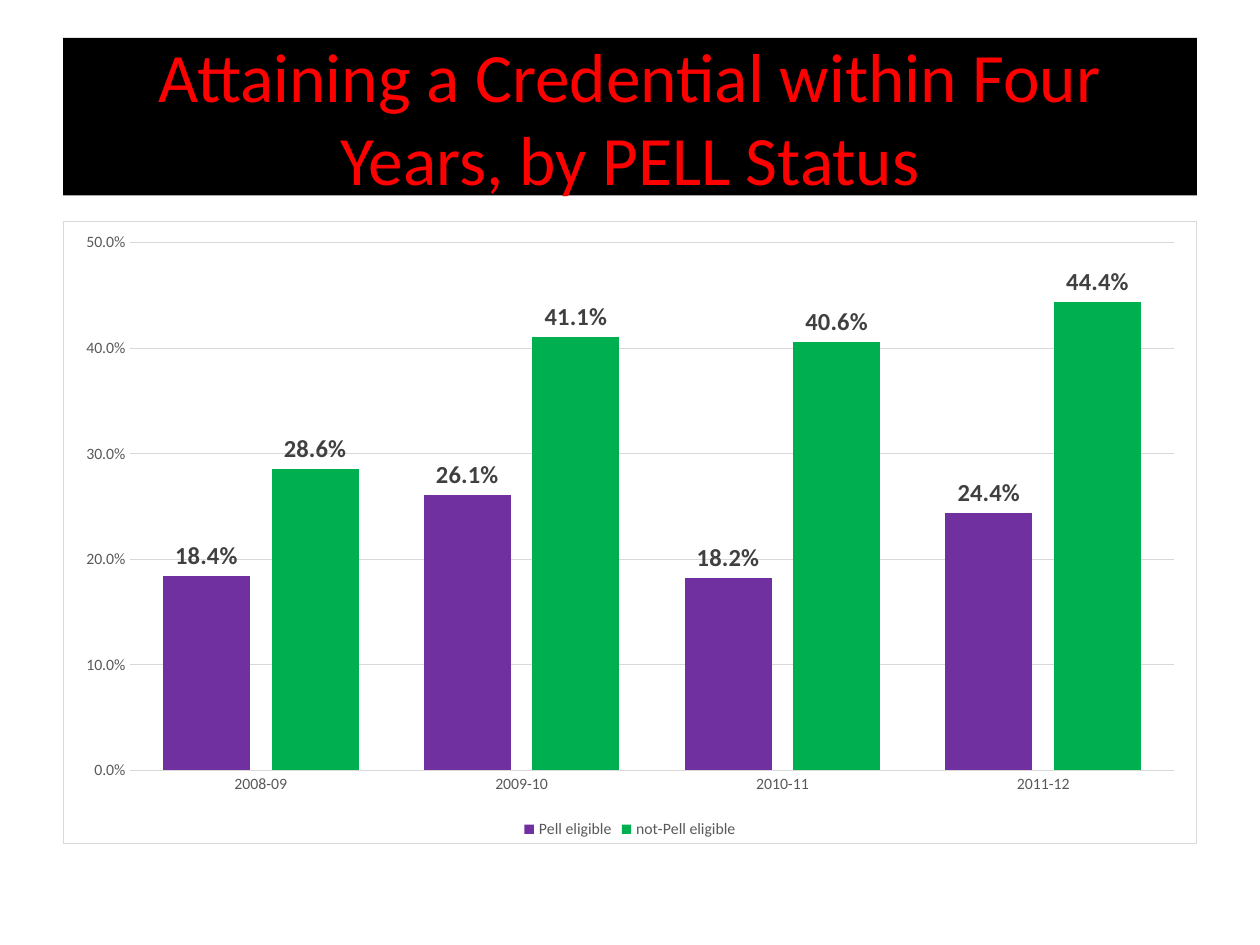
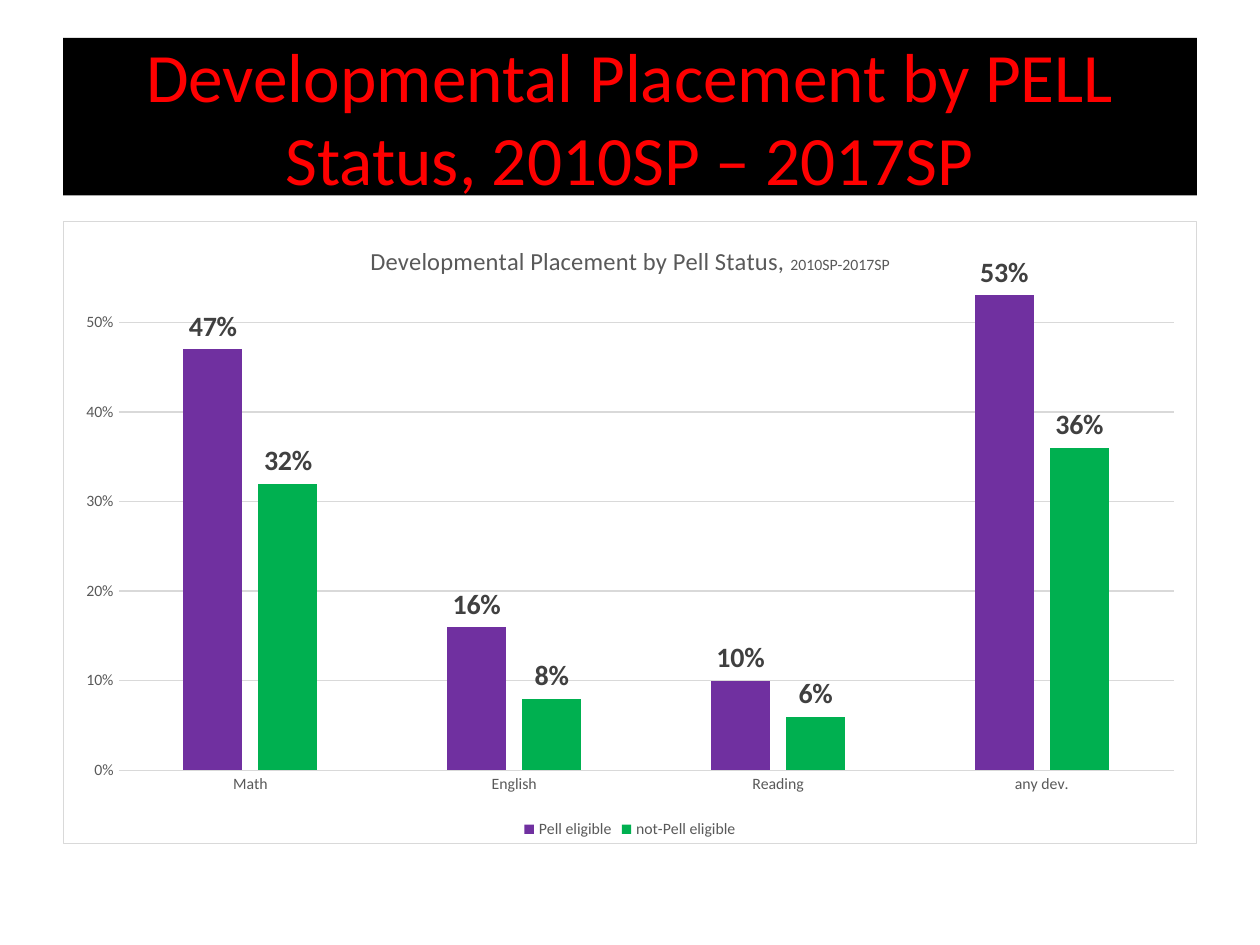
from typing import Any, NamedTuple

from lxml.etree import fromstring
from pptx import Presentation
from pptx.chart.chart import Chart
from pptx.chart.data import CategoryChartData as Data
from pptx.dml.color import RGBColor as Rgb
from pptx.enum.chart import XL_CHART_TYPE as Kind
from pptx.enum.chart import XL_LABEL_POSITION as Spot
from pptx.enum.chart import XL_LEGEND_POSITION as Side
from pptx.enum.chart import XL_TICK_MARK as Tick
from pptx.enum.text import MSO_ANCHOR as Anchor
from pptx.enum.text import MSO_AUTO_SIZE as Auto
from pptx.enum.text import PP_ALIGN as Align
from pptx.util import Pt

HEX = {
    "band": "000000",
    "title": "FF0000",
    "text": "595959",
    "label": "404040",
    "rule": "D9D9D9",
    "paper": "FFFFFF",
    "Pell eligible": "7030A0",
    "not-Pell eligible": "00B050",
}
FACE = "Calibri"
LEFT, WIDTH = Pt(36), Pt(648)
NS = (
    'xmlns:c="http://schemas.openxmlformats.org/drawingml/2006/chart" '
    'xmlns:a="http://schemas.openxmlformats.org/drawingml/2006/main"'
)


class Page(NamedTuple):
    title: str
    groups: list[str]
    pell: list[float]
    other: list[float]
    form: str
    size: int
    gap: int
    lap: int
    top: float
    head: tuple[tuple[str, int], ...] = ()


PAGES = [
    Page(
        title="Attaining a Credential within Four Years, by PELL Status",
        groups=["2008-09", "2009-10", "2010-11", "2011-12"],
        pell=[0.184, 0.261, 0.182, 0.244],
        other=[0.286, 0.411, 0.406, 0.444],
        form="0.0%", size=14, gap=75, lap=-25, top=0.5,
    ),
    Page(
        title="Developmental Placement by PELL Status, 2010SP – 2017SP",
        groups=["Math", "English", "Reading", "any dev."],
        pell=[0.47, 0.16, 0.1, 0.53],
        other=[0.32, 0.08, 0.06, 0.36],
        form="0%", size=16, gap=219, lap=-27, top=0.53,
        head=(("Developmental Placement by Pell Status, ", 14), ("2010SP-2017SP", 9)),
    ),
]


def apply(item: Any, **values: Any) -> None:
    for name, value in values.items():
        setattr(item, name, value)


def style(font: Any, size: float, tone: str, bold: bool = False) -> None:
    apply(font, name=FACE, size=Pt(size), bold=bold)
    font.color.rgb = Rgb.from_string(HEX[tone])


def paint(fill: Any, tone: str) -> None:
    fill.solid()
    fill.fore_color.rgb = Rgb.from_string(HEX[tone])


def rule(line: Any) -> None:
    paint(line.fill, "rule")
    line.width = Pt(0.75)


def band(shape: Any, text: str) -> None:
    apply(shape, left=LEFT, top=Pt(21.6), width=WIDTH, height=Pt(90))
    paint(shape.fill, "band")
    frame = shape.text_frame
    apply(frame, text=text, word_wrap=True, auto_size=Auto.NONE,
          vertical_anchor=Anchor.MIDDLE)
    line = frame.paragraphs[0]
    line.alignment = Align.CENTER
    style(line.runs[0].font, 39.6, "title")


def frame(chart: Chart) -> None:
    box = fromstring(
        f'<c:spPr {NS}><a:solidFill><a:srgbClr val="{HEX["paper"]}"/></a:solidFill>'
        f'<a:ln w="{Pt(0.75)}"><a:solidFill><a:srgbClr val="{HEX["rule"]}"/>'
        "</a:solidFill></a:ln></c:spPr>"
    )
    chart.element.find("{*}chart").addnext(box)


def axes(chart: Chart, page: Page) -> None:
    for axis in (chart.category_axis, chart.value_axis):
        apply(axis, major_tick_mark=Tick.NONE, minor_tick_mark=Tick.NONE)
        style(axis.tick_labels.font, 9, "text")
    rule(chart.category_axis.format.line)
    scale = chart.value_axis
    apply(scale, minimum_scale=0, maximum_scale=page.top, major_unit=0.1,
          has_major_gridlines=True)
    apply(scale.tick_labels, number_format=page.form, number_format_is_linked=False)
    scale.format.line.fill.background()
    rule(scale.major_gridlines.format.line)


def bars(chart: Chart, page: Page) -> None:
    plot = chart.plots[0]
    apply(plot, gap_width=page.gap, overlap=page.lap, vary_by_categories=False)
    for row in plot.series:
        paint(row.format.fill, row.name)
        row.invert_if_negative = False
        labels = row.data_labels
        apply(labels, show_value=True, position=Spot.OUTSIDE_END,
              number_format=page.form, number_format_is_linked=False)
        style(labels.font, page.size, "label", True)


def heading(chart: Chart, page: Page) -> None:
    chart.has_title = bool(page.head)
    if page.head:
        line = chart.chart_title.text_frame.paragraphs[0]
        for text, size in page.head:
            run = line.add_run()
            run.text = text
            style(run.font, size, "text")
        chart.chart_title.include_in_layout = False


def graph(slide: Any, page: Page) -> None:
    data = Data(number_format=page.form)
    data.categories = page.groups
    data.add_series("Pell eligible", page.pell)
    data.add_series("not-Pell eligible", page.other)
    chart = slide.shapes.add_chart(
        Kind.COLUMN_CLUSTERED, LEFT, Pt(126), WIDTH, Pt(356.4), data
    ).chart
    style(chart.font, 10, "band")
    heading(chart, page)
    chart.has_legend = True
    apply(chart.legend, position=Side.BOTTOM, include_in_layout=False)
    style(chart.legend.font, 9, "text")
    axes(chart, page)
    bars(chart, page)
    frame(chart)


def main() -> None:
    deck = Presentation()
    apply(deck, slide_width=Pt(720), slide_height=Pt(540))
    plain = deck.slide_layouts.get_by_name("Title Only")
    for page in PAGES:
        slide = deck.slides.add_slide(plain)
        band(slide.shapes.title, page.title)
        graph(slide, page)
    deck.save("out.pptx")


if __name__ == "__main__":
    main()
